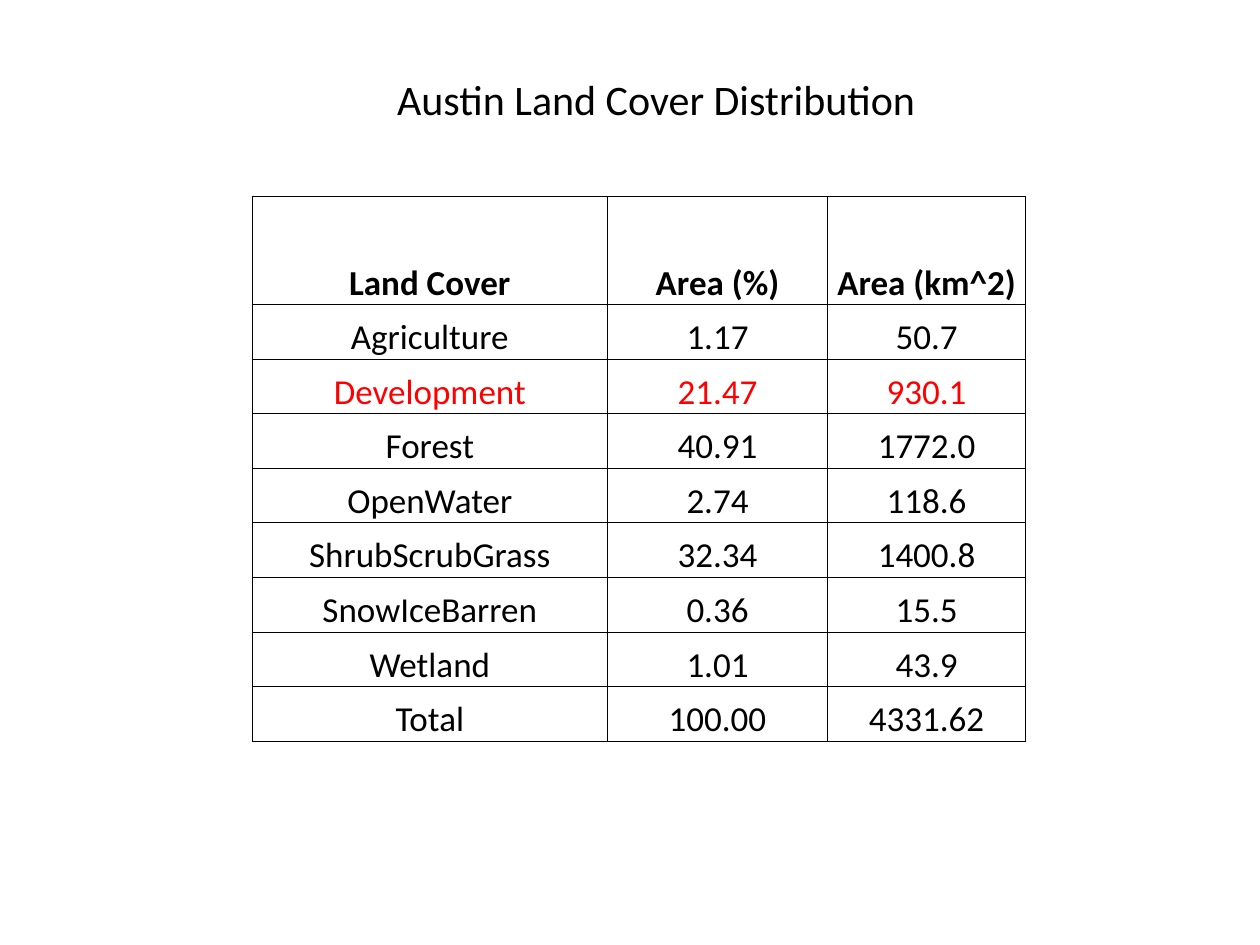
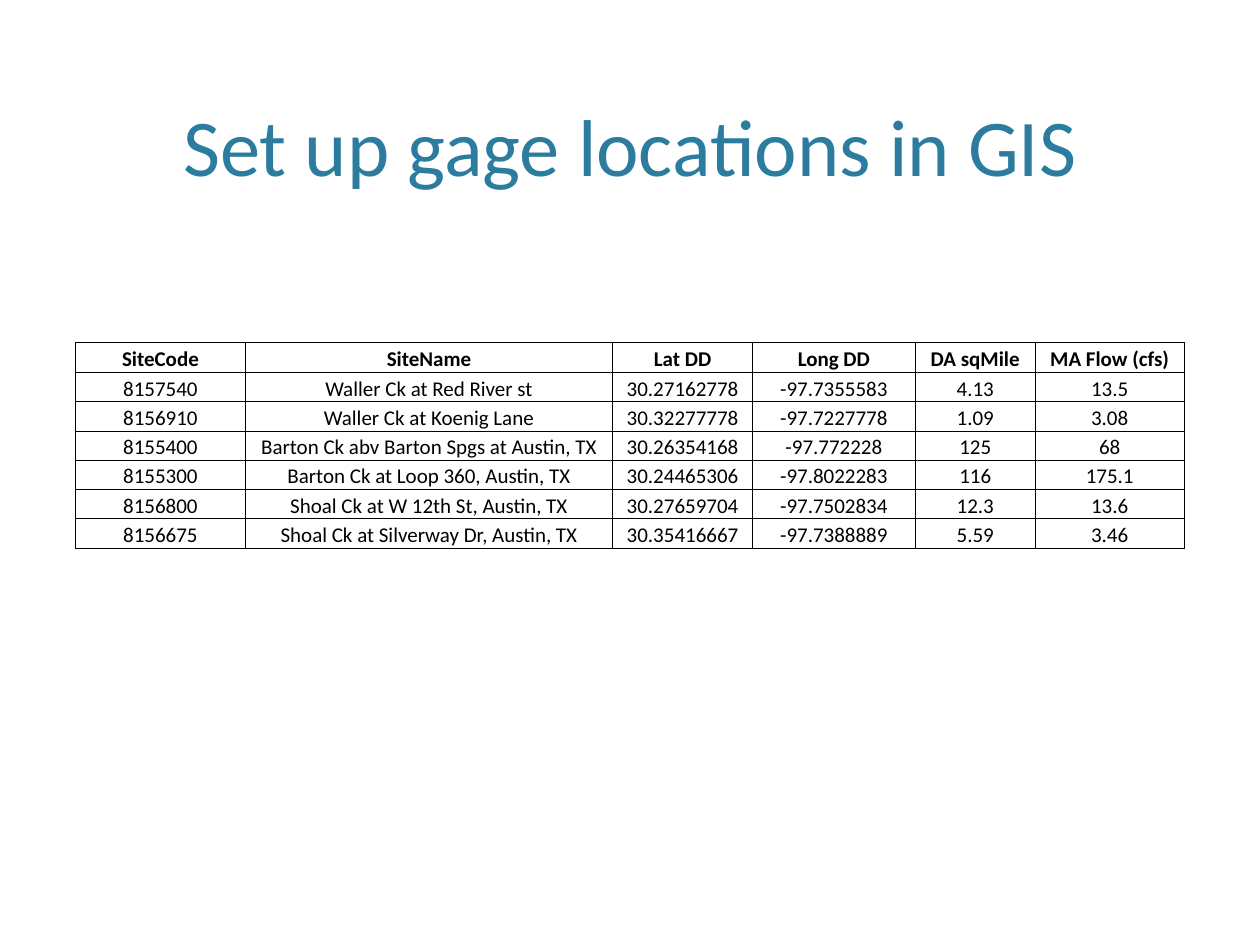
from dataclasses import dataclass

from lxml.etree import SubElement
from pptx import Presentation
from pptx.dml.color import RGBColor
from pptx.enum.text import MSO_ANCHOR, PP_ALIGN
from pptx.oxml.ns import qn
from pptx.slide import Slide
from pptx.table import _Cell
from pptx.text.text import _Paragraph
from pptx.util import Cm, Pt


@dataclass(frozen=True)
class Theme:
    font: str = "Calibri"
    text: str = "000000"
    highlight: str = "FF0000"
    heading: str = "2C7C9F"
    border: str = "000000"
    border_width: float = 0.5
    caption_size: int = 24
    heading_size: int = 46
    large_table_size: int = 20
    small_table_size: int = 12
    cell_margin: float = 0.03


@dataclass(frozen=True)
class Title:
    text: str
    left: float
    top: float
    width: float
    height: float
    size: int
    color: str
    anchor: MSO_ANCHOR


@dataclass(frozen=True)
class Grid:
    left: float
    top: float
    column_widths: tuple[float, ...]
    header_height: float
    row_height: float
    size: int
    rows: tuple[tuple[str, ...], ...]
    highlighted: str = ""


THEME = Theme()

LAND_COVER_TITLE = Title(
    "Austin Land Cover Distribution", 4.52, 1.35, 17.42, 1.27,
    THEME.caption_size, THEME.text, MSO_ANCHOR.TOP,
)
LAND_COVER = Grid(
    5.08, 3.96, (7.17, 4.43, 4.0), 2.18, 1.1, THEME.large_table_size,
    (
        ("Land Cover", "Area (%)", "Area (km^2)"),
        ("Agriculture", "1.17", "50.7"),
        ("Development", "21.47", "930.1"),
        ("Forest", "40.91", "1772.0"),
        ("OpenWater", "2.74", "118.6"),
        ("ShrubScrubGrass", "32.34", "1400.8"),
        ("SnowIceBarren", "0.36", "15.5"),
        ("Wetland", "1.01", "43.9"),
        ("Total", "100.00", "4331.62"),
    ),
    highlighted="Development",
)

GAGES_TITLE = Title(
    "Set up gage locations in GIS", 1.52, 0.3, 22.35, 3.71,
    THEME.heading_size, THEME.heading, MSO_ANCHOR.BOTTOM,
)
GAGES = Grid(
    1.52, 6.91, (3.43, 7.4, 2.82, 3.28, 2.42, 3.0), 0.6, 0.59, THEME.small_table_size,
    (
        ("SiteCode", "SiteName", "Lat DD", "Long DD", "DA sqMile", "MA Flow (cfs)"),
        ("8157540", "Waller Ck at Red River st", "30.27162778", "-97.7355583", "4.13", "13.5"),
        ("8156910", "Waller Ck at Koenig Lane", "30.32277778", "-97.7227778", "1.09", "3.08"),
        ("8155400", "Barton Ck abv Barton Spgs at Austin, TX", "30.26354168", "-97.772228", "125", "68"),
        ("8155300", "Barton Ck at Loop 360, Austin, TX", "30.24465306", "-97.8022283", "116", "175.1"),
        ("8156800", "Shoal Ck at W 12th St, Austin, TX", "30.27659704", "-97.7502834", "12.3", "13.6"),
        ("8156675", "Shoal Ck at Silverway Dr, Austin, TX", "30.35416667", "-97.7388889", "5.59", "3.46"),
    ),
)


def style_paragraph(paragraph: _Paragraph, size: int, color: str, bold: bool = False) -> None:
    paragraph.alignment = PP_ALIGN.CENTER
    paragraph.font.name = THEME.font
    paragraph.font.size = Pt(size)
    paragraph.font.bold = bold
    paragraph.font.color.rgb = RGBColor.from_string(color)


def add_borders(cell: _Cell) -> None:
    properties = cell._tc.get_or_add_tcPr()
    for side in ("L", "R", "T", "B"):
        line = SubElement(properties, qn(f"a:ln{side}"), w=str(Pt(THEME.border_width)))
        fill = SubElement(line, qn("a:solidFill"))
        SubElement(fill, qn("a:srgbClr"), val=THEME.border)


def add_title(slide: Slide, title: Title) -> None:
    box = slide.shapes.add_textbox(
        Cm(title.left), Cm(title.top), Cm(title.width), Cm(title.height)
    )
    frame = box.text_frame
    frame.word_wrap = True
    frame.vertical_anchor = title.anchor
    frame.text = title.text
    style_paragraph(frame.paragraphs[0], title.size, title.color)


def fill_cell(cell: _Cell, text: str, size: int, color: str, bold: bool) -> None:
    cell.text = text
    cell.vertical_anchor = MSO_ANCHOR.BOTTOM
    cell.margin_left = cell.margin_right = cell.margin_top = Cm(THEME.cell_margin)
    cell.margin_bottom = 0
    style_paragraph(cell.text_frame.paragraphs[0], size, color, bold)
    add_borders(cell)
    cell.fill.background()


def add_grid(slide: Slide, grid: Grid) -> None:
    heights = [grid.header_height] + [grid.row_height] * (len(grid.rows) - 1)
    table = slide.shapes.add_table(
        len(grid.rows), len(grid.column_widths), Cm(grid.left), Cm(grid.top),
        Cm(sum(grid.column_widths)), Cm(sum(heights)),
    ).table
    table.first_row = table.horz_banding = False
    for column, width in zip(table.columns, grid.column_widths):
        column.width = Cm(width)
    for row_number, (row, height, values) in enumerate(zip(table.rows, heights, grid.rows)):
        row.height = Cm(height)
        color = THEME.highlight if values[0] == grid.highlighted else THEME.text
        for cell, value in zip(row.cells, values):
            fill_cell(cell, value, grid.size, color, bold=row_number == 0)


def main() -> None:
    presentation = Presentation()
    presentation.slide_width = Cm(25.4)
    presentation.slide_height = Cm(19.05)
    for title, grid in ((LAND_COVER_TITLE, LAND_COVER), (GAGES_TITLE, GAGES)):
        slide = presentation.slides.add_slide(presentation.slide_layouts[6])
        add_title(slide, title)
        add_grid(slide, grid)
    presentation.save("out.pptx")


if __name__ == "__main__":
    main()
